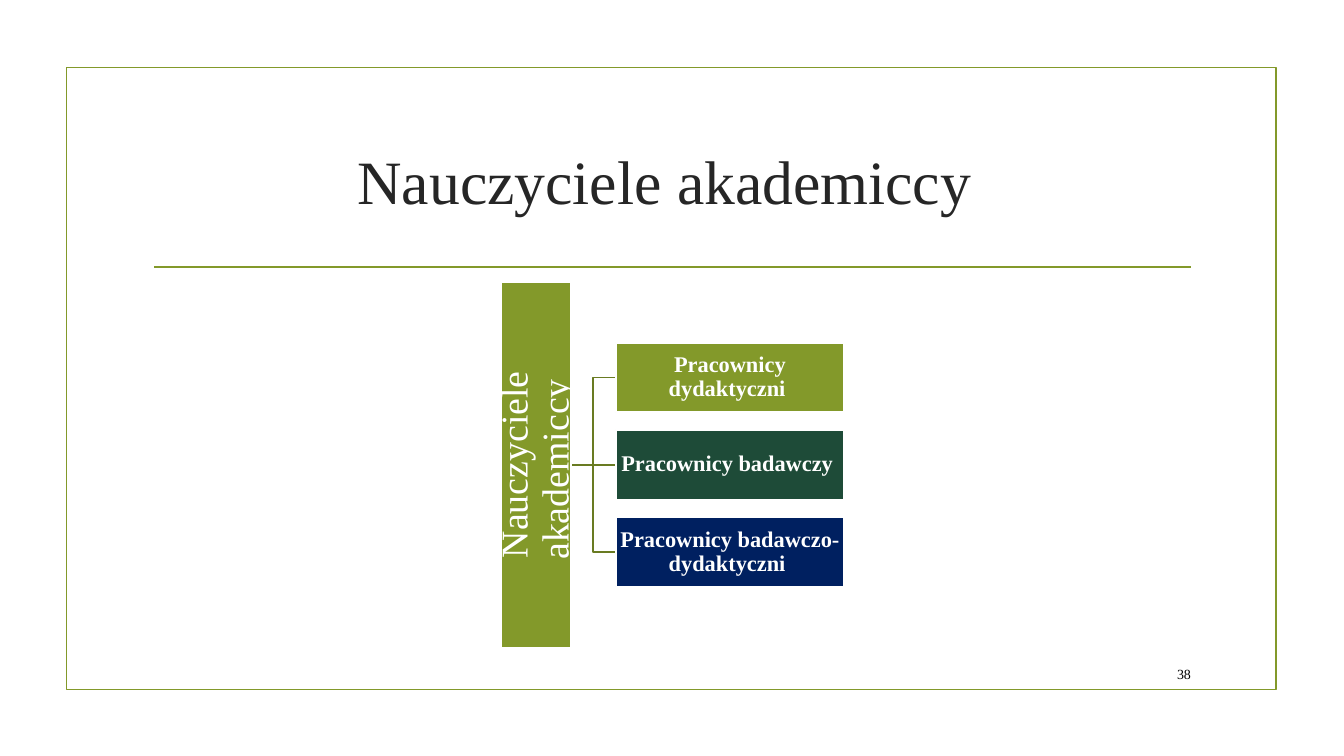
from pptx import Presentation
from pptx.dml.color import RGBColor
from pptx.enum.shapes import MSO_CONNECTOR, MSO_SHAPE
from pptx.enum.text import MSO_ANCHOR, PP_ALIGN
from pptx.oxml.ns import qn
from pptx.util import Inches, Pt
from lxml.etree import SubElement

FONT = "Times New Roman"
OLIVE, DARK, WHITE = "83992A", "697B22", "FFFFFF"


def paint(part, line, fill=None):
    """Set the outline and fill of a shape, or the stroke of a connector."""
    part.line.color.rgb = RGBColor.from_string(line)
    part.line.width = Pt(1.25)
    if part.shape_type == 9 or hasattr(part, "begin_x"):
        SubElement(part._element.spPr, qn("a:effectLst"))
        return
    part.shadow.inherit = False
    if fill:
        part.fill.solid()
        part.fill.fore_color.rgb = RGBColor.from_string(fill)
    else:
        part.fill.background()


def write(box, text, size, color, bold=False, inset=None, space=1.0, align=PP_ALIGN.CENTER):
    frame = box.text_frame
    frame.word_wrap = True
    frame.vertical_anchor = MSO_ANCHOR.MIDDLE
    if inset is not None:
        frame.margin_left = frame.margin_right = Inches(inset)
        frame.margin_top = frame.margin_bottom = Inches(inset)
    para = frame.paragraphs[0]
    para.alignment = align
    para.line_spacing = space
    run = para.add_run()
    run.text = text
    run.font.name = FONT
    run.font.size = Pt(size)
    run.font.bold = bold
    run.font.color.rgb = RGBColor.from_string(color)


deck = Presentation()
deck.slide_width, deck.slide_height = Inches(13.33), Inches(7.5)
slide = deck.slides.add_slide(deck.slide_layouts[6])
shapes = slide.shapes

# Frame, rule and title
frame = shapes.add_shape(MSO_SHAPE.RECTANGLE, Inches(0.66), Inches(0.67), Inches(12), Inches(6.17))
paint(frame, OLIVE)
rule = shapes.add_connector(MSO_CONNECTOR.STRAIGHT, Inches(1.53), Inches(2.65), Inches(11.81), Inches(2.65))
paint(rule, OLIVE)
title = shapes.add_textbox(Inches(1.42), Inches(1.07), Inches(10.5), Inches(1.43))
write(title, "Nauczyciele akademiccy ", 44, "262626")

# Tree: branches first, then the boxes over them
mid, step, high = 4.61, 0.865, 0.69
start, bend, left = 5.65, 5.88, 6.11
groups = [
    ("Pracownicy dydaktyczni ", OLIVE),
    ("Pracownicy badawczy ", "1E4B38"),
    ("Pracownicy badawczo-dydaktyczni ", "002060"),
]
rows = [mid + (i - 1) * step for i in range(len(groups))]

for row in rows:
    if row == mid:
        branch = shapes.add_connector(MSO_CONNECTOR.STRAIGHT, Inches(start), Inches(mid), Inches(left), Inches(mid))
    else:
        pen = shapes.build_freeform(Inches(start), Inches(mid))
        turns = [(bend, mid), (bend, row), (left, row)]
        pen.add_line_segments([(Inches(x), Inches(y)) for x, y in turns], close=False)
        branch = pen.convert_to_shape()
    paint(branch, DARK)

root = shapes.add_shape(MSO_SHAPE.RECTANGLE, Inches(3.5), Inches(mid - high / 2), Inches(3.63), Inches(high))
root.rotation = 270
paint(root, WHITE, OLIVE)
write(root, "Nauczyciele akademiccy ", 27, WHITE, inset=0.02, space=0.9)

for row, (text, fill) in zip(rows, groups):
    box = shapes.add_shape(MSO_SHAPE.RECTANGLE, Inches(left), Inches(row - high / 2), Inches(2.26), Inches(high))
    paint(box, WHITE, fill)
    write(box, text, 16, WHITE, bold=True, inset=0.01, space=0.9)

# Page number
page = shapes.add_textbox(Inches(11.32), Inches(6.53), Inches(0.59), Inches(0.31))
write(page, "38", 10, "000000", align=PP_ALIGN.RIGHT)

deck.save("out.pptx")
